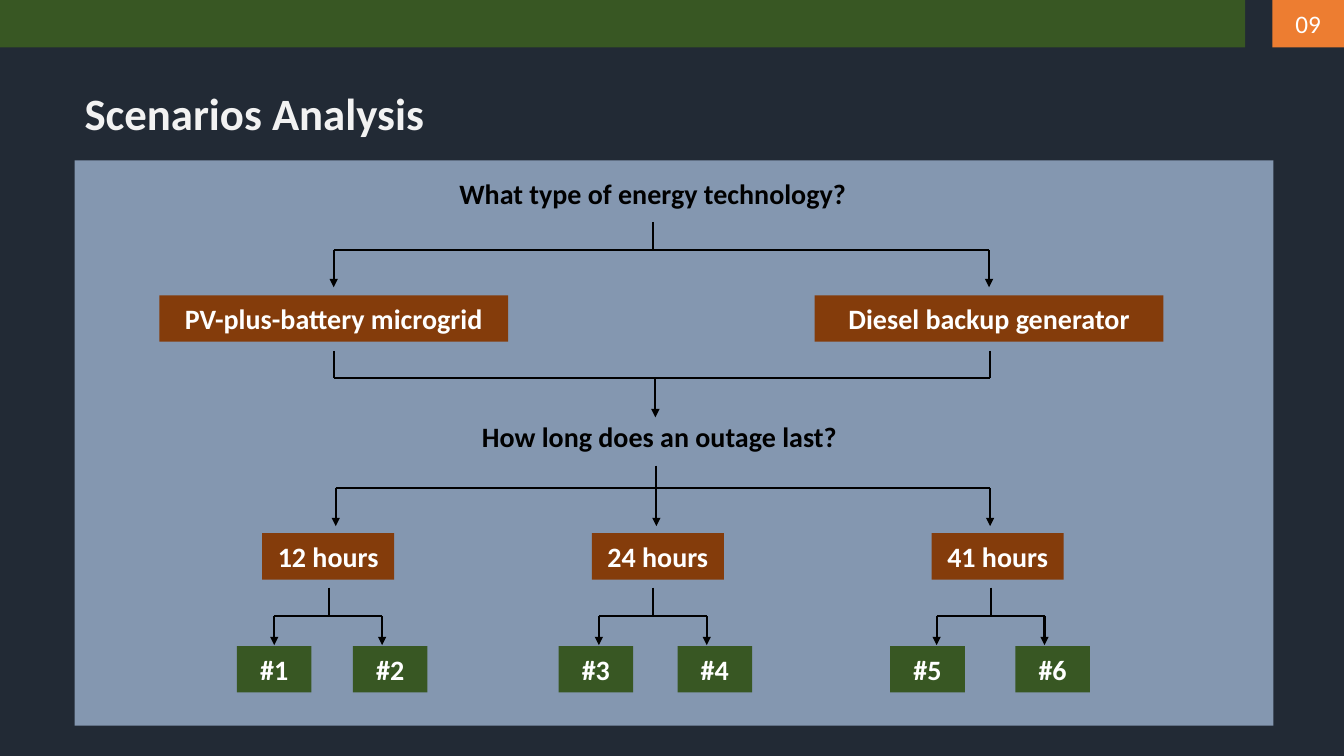
from dataclasses import dataclass

from lxml.etree import SubElement
from pptx import Presentation
from pptx.dml.color import RGBColor
from pptx.enum.shapes import MSO_CONNECTOR, MSO_SHAPE
from pptx.enum.text import MSO_ANCHOR, MSO_AUTO_SIZE, PP_ALIGN
from pptx.oxml.ns import qn
from pptx.util import Inches, Pt


@dataclass(frozen=True)
class Theme:
    font: str = "Calibri"
    night: str = "222A35"
    panel: str = "8497B0"
    green: str = "385723"
    orange: str = "ED7D31"
    brown: str = "843C0B"
    black: str = "000000"
    white: str = "FFFFFF"
    title_color: str = "F2F2F2"
    title_size: int = 32
    body_size: int = 20
    number_size: int = 18
    line_width: float = 1.5


class SlideBuilder:
    def __init__(self, slide, theme):
        self.shapes = slide.shapes
        self.theme = theme

    def label(self, shape, text, color, size, bold=True, align=PP_ALIGN.CENTER,
              anchor=MSO_ANCHOR.MIDDLE):
        frame = shape.text_frame
        frame.word_wrap = True
        frame.vertical_anchor = anchor
        paragraph = frame.paragraphs[0]
        paragraph.alignment = align
        run = paragraph.add_run()
        run.text = text
        font_format = {"name": self.theme.font, "size": Pt(size), "bold": bold}
        for attribute, value in font_format.items():
            setattr(run.font, attribute, value)
        run.font.color.rgb = RGBColor.from_string(color)

    def box(self, left, top, width, height, fill):
        rectangle = self.shapes.add_shape(
            MSO_SHAPE.RECTANGLE, *map(Inches, (left, top, width, height)))
        rectangle.shadow.inherit = False
        rectangle.fill.solid()
        rectangle.fill.fore_color.rgb = RGBColor.from_string(fill)
        rectangle.line.fill.background()
        return rectangle

    def node(self, left, top, width, text, fill):
        box = self.box(left, top, width, 0.46, fill)
        self.label(box, text, self.theme.white, self.theme.body_size)

    def title(self, left, top, width, height, text):
        heading = self.shapes.add_textbox(*map(Inches, (left, top, width, height)))
        self.label(heading, text, self.theme.title_color, self.theme.title_size,
                   align=PP_ALIGN.LEFT, anchor=MSO_ANCHOR.TOP)
        heading.text_frame.auto_size = MSO_AUTO_SIZE.SHAPE_TO_FIT_TEXT

    def question(self, left, top, width, text):
        prompt = self.shapes.add_textbox(*map(Inches, (left, top, width, 0.46)))
        self.label(prompt, text, self.theme.black, self.theme.body_size)

    def line(self, x1, y1, x2, y2, arrow=False):
        connector = self.shapes.add_connector(
            MSO_CONNECTOR.STRAIGHT, *map(Inches, (x1, y1, x2, y2)))
        connector.line.width = Pt(self.theme.line_width)
        connector.line.color.rgb = RGBColor.from_string(self.theme.black)
        properties = connector.element.spPr
        if arrow:
            SubElement(properties.find(qn("a:ln")), qn("a:tailEnd"), type="triangle")
        SubElement(properties, qn("a:effectLst"))

    def split(self, stem_x, top, bar_y, bottom, branches):
        """Draw a stem down to a bar, with an arrow down from it at each branch."""
        self.line(stem_x, top, stem_x, bar_y)
        self.line(branches[0], bar_y, branches[-1], bar_y)
        for branch in branches:
            self.line(branch, bar_y, branch, bottom, arrow=True)

    def merge(self, stem_x, top, bar_y, bottom, branches):
        """Draw branches down to a bar, with one arrow down from it."""
        for branch in branches:
            self.line(branch, top, branch, bar_y)
        self.line(branches[0], bar_y, branches[-1], bar_y)
        self.line(stem_x, bar_y, stem_x, bottom, arrow=True)


def main():
    presentation = Presentation()
    presentation.slide_width = Inches(13.33)
    presentation.slide_height = Inches(7.5)
    theme = Theme()
    builder = SlideBuilder(
        presentation.slides.add_slide(presentation.slide_layouts[6]), theme)

    builder.box(0, 0, 13.33, 7.5, theme.night)
    builder.title(0.74, 0.8, 4.23, 0.64, "Scenarios Analysis")
    builder.box(0, 0, 12.35, 0.47, theme.green)
    page_tab = builder.box(12.62, 0, 0.71, 0.47, theme.orange)
    builder.label(page_tab, "09", theme.white, theme.number_size, bold=False)
    builder.box(0.74, 1.59, 11.89, 5.61, theme.panel)

    builder.question(3.91, 1.69, 5.13, "What type of energy technology?")
    builder.split(6.48, 2.2, 2.48, 2.85, (3.31, 9.81))
    for left, technology in ((1.58, "PV-plus-battery microgrid"),
                             (8.08, "Diesel backup generator")):
        builder.node(left, 2.93, 3.46, technology, theme.brown)

    builder.merge(6.5, 3.48, 3.75, 4.14, (3.31, 9.82))
    builder.question(4.59, 4.1, 3.9, "How long does an outage last?")
    builder.split(6.51, 4.62, 4.84, 5.22, (3.33, 6.51, 9.82))

    # Duration, its left edge, the stem below it, and the left edges of its scenarios
    outages = (
        ("12 hours", 2.6, 3.26, (2.35, 3.5)),
        ("24 hours", 5.87, 6.48, (5.54, 6.72)),
        ("41 hours", 9.24, 9.83, (8.83, 10.07)),
    )
    scenario_number = 1
    for duration, left, stem_x, scenario_lefts in outages:
        builder.node(left, 5.29, 1.31, duration, theme.brown)
        builder.split(stem_x, 5.83, 6.11, 6.4, (stem_x - 0.54, stem_x + 0.53))
        for scenario_left in scenario_lefts:
            builder.node(scenario_left, 6.41, 0.74, f"#{scenario_number}", theme.green)
            scenario_number += 1

    presentation.save("out.pptx")


if __name__ == "__main__":
    main()
